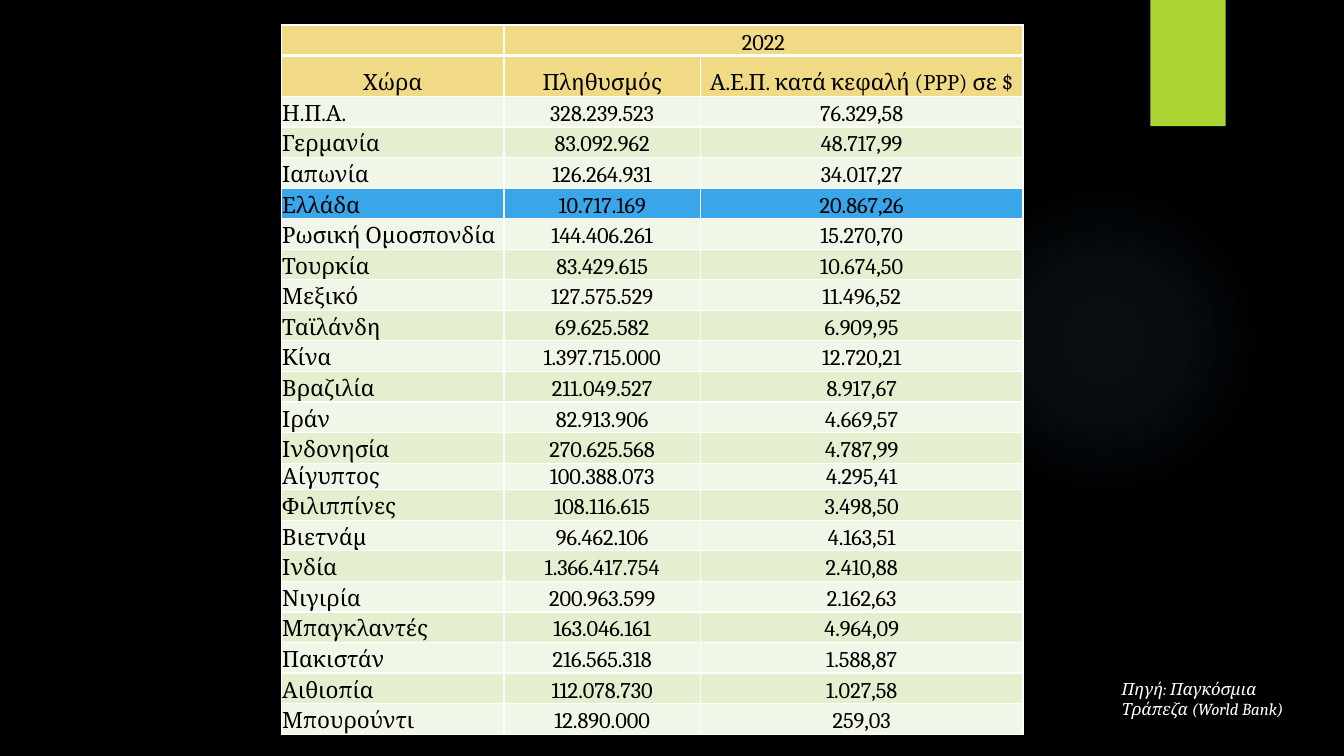
from lxml import etree
from pptx import Presentation
from pptx.dml.color import RGBColor
from pptx.enum.shapes import MSO_SHAPE
from pptx.enum.text import MSO_ANCHOR, PP_ALIGN
from pptx.oxml.ns import qn
from pptx.util import Cm, Pt

ELLIPSE, RECTANGLE = MSO_SHAPE.OVAL, MSO_SHAPE.RECTANGLE
LEFT, CENTER = PP_ALIGN.LEFT, PP_ALIGN.CENTER
BOTTOM = MSO_ANCHOR.BOTTOM

BLACK, WHITE = "000000", "FFFFFF"
LIME, GLOW = "ACD433", "7AC4F0"
HEADER, HIGHLIGHT = "F0DA85", "38A6E9"
BANDS = ("F1F7E8", "E3EFCE")

HEADINGS = ("Χώρα", "Πληθυσμός", "Α.Ε.Π. κατά κεφαλή (PPP) σε $")
COUNTRIES = [
    ("Η.Π.Α.", "328.239.523", "76.329,58"),
    ("Γερμανία", "83.092.962", "48.717,99"),
    ("Ιαπωνία", "126.264.931", "34.017,27"),
    ("Ελλάδα", "10.717.169", "20.867,26"),
    ("Ρωσική Ομοσπονδία", "144.406.261", "15.270,70"),
    ("Τουρκία", "83.429.615", "10.674,50"),
    ("Μεξικό", "127.575.529", "11.496,52"),
    ("Ταϊλάνδη", "69.625.582", "6.909,95"),
    ("Κίνα", "1.397.715.000", "12.720,21"),
    ("Βραζιλία", "211.049.527", "8.917,67"),
    ("Ιράν", "82.913.906", "4.669,57"),
    ("Ινδονησία", "270.625.568", "4.787,99"),
    ("Αίγυπτος", "100.388.073", "4.295,41"),
    ("Φιλιππίνες", "108.116.615", "3.498,50"),
    ("Βιετνάμ", "96.462.106", "4.163,51"),
    ("Ινδία", "1.366.417.754", "2.410,88"),
    ("Νιγιρία", "200.963.599", "2.162,63"),
    ("Μπαγκλαντές", "163.046.161", "4.964,09"),
    ("Πακιστάν", "216.565.318", "1.588,87"),
    ("Αιθιοπία", "112.078.730", "1.027,58"),
    ("Μπουρούντι", "12.890.000", "259,03"),
]
COLUMN_WIDTHS = (5.61, 4.95, 8.13)
ROW_HEIGHT = 0.77
SPECIAL_HEIGHTS = {"Χώρα": 1.03, "Αίγυπτος": 0.67}


def color(hex_string):
    return RGBColor.from_string(hex_string)


def add_color(parent, hex_string, alpha=100):
    element = etree.SubElement(parent, qn("a:srgbClr"), val=hex_string)
    if alpha < 100:
        etree.SubElement(element, qn("a:alpha"), val=str(alpha * 1000))


class SlideBuilder:
    font_name = "Cambria"

    def __init__(self, slide, background):
        self.slide = slide
        slide.background.fill.solid()
        slide.background.fill.fore_color.rgb = color(background)

    def shape(self, kind, left, top, width, height, fill):
        shape = self.slide.shapes.add_shape(
            kind, Cm(left), Cm(top), Cm(width), Cm(height))
        shape.shadow.inherit = False
        shape.line.fill.background()
        shape.fill.solid()
        shape.fill.fore_color.rgb = color(fill)
        return shape

    def glow(self, left, top, diameter, hex_string, stops):
        shape = self.shape(ELLIPSE, left, top, diameter, diameter, hex_string)
        solid = shape.element.spPr.find(qn("a:solidFill"))
        gradient = etree.Element(qn("a:gradFill"))
        stop_list = etree.SubElement(gradient, qn("a:gsLst"))
        for position, alpha in stops:
            stop = etree.SubElement(stop_list, qn("a:gs"), pos=str(position * 1000))
            add_color(stop, hex_string, alpha)
        circle = etree.SubElement(gradient, qn("a:path"), {"path": "circle"})
        etree.SubElement(circle, qn("a:fillToRect"),
                         {side: "50000" for side in "ltrb"})
        solid.getparent().replace(solid, gradient)

    def set_text(self, paragraph, text, size, hex_string, align=LEFT, italic=False):
        paragraph.text = text
        paragraph.alignment = align
        font = paragraph.font
        font.name, font.size, font.italic = self.font_name, Pt(size), italic
        font.color.rgb = color(hex_string)

    def text(self, left, top, width, height, text, size, hex_string, italic=False):
        box = self.slide.shapes.add_textbox(
            Cm(left), Cm(top), Cm(width), Cm(height))
        box.text_frame.word_wrap = True
        self.set_text(box.text_frame.paragraphs[0], text, size, hex_string,
                      italic=italic)

    def table(self, left, top, widths, heights):
        frame = self.slide.shapes.add_table(
            len(heights), len(widths), Cm(left), Cm(top),
            Cm(sum(widths)), Cm(sum(heights)))
        table = frame.table
        for column, width in zip(table.columns, widths):
            column.width = Cm(width)
        for row, height in zip(table.rows, heights):
            row.height = Cm(height)
        return table

    def cell(self, cell, text, fill, align, top_line=1, bottom_line=1):
        cell.margin_left = cell.margin_right = cell.margin_top = Cm(0.02)
        cell.margin_bottom = 0
        cell.vertical_anchor = BOTTOM
        cell.fill.solid()
        cell.fill.fore_color.rgb = color(fill)
        self.set_text(cell.text_frame.paragraphs[0], text, 16, BLACK, align)
        borders = (("L", 1), ("R", 1), ("T", top_line), ("B", bottom_line))
        properties = cell._tc.get_or_add_tcPr()
        for index, (side, width) in enumerate(borders):
            line = etree.Element(qn(f"a:ln{side}"), w=str(Pt(width)))
            add_color(etree.SubElement(line, qn("a:solidFill")), WHITE)
            properties.insert(index, line)


def main():
    presentation = Presentation()
    presentation.slide_width, presentation.slide_height = Cm(33.87), Cm(19.05)
    slide = presentation.slides.add_slide(presentation.slide_layouts[6])
    builder = SlideBuilder(slide, BLACK)

    # Decoration
    builder.glow(23.9, 4.65, 7.82, GLOW, ((0, 7), (36, 6), (69, 0)))
    builder.shape(RECTANGLE, 28.99, 0, 1.9, 3.18, LIME)

    # Country table
    rows = [("", "2022", ""), HEADINGS, *COUNTRIES]
    heights = [SPECIAL_HEIGHTS.get(row[0], ROW_HEIGHT) for row in rows]
    table = builder.table(7.09, 0.63, COLUMN_WIDTHS, heights)
    table.cell(0, 1).merge(table.cell(0, 2))
    for row_index, row in enumerate(rows):
        if row_index < 2:
            fill = HEADER
        elif row[0] == "Ελλάδα":
            fill = HIGHLIGHT
        else:
            fill = BANDS[row_index % 2]
        for column_index, text in enumerate(row):
            align = LEFT if row_index > 1 and column_index == 0 else CENTER
            builder.cell(table.cell(row_index, column_index), text, fill, align,
                         top_line=3 if row_index == 1 else 1,
                         bottom_line=3 if row_index == 0 else 1)

    # Source note
    builder.text(28.02, 16.97, 5.38, 1.3, "Πηγή: Παγκόσμια Τράπεζα (World Bank)",
                 12, WHITE, italic=True)

    presentation.save("out.pptx")


if __name__ == "__main__":
    main()
